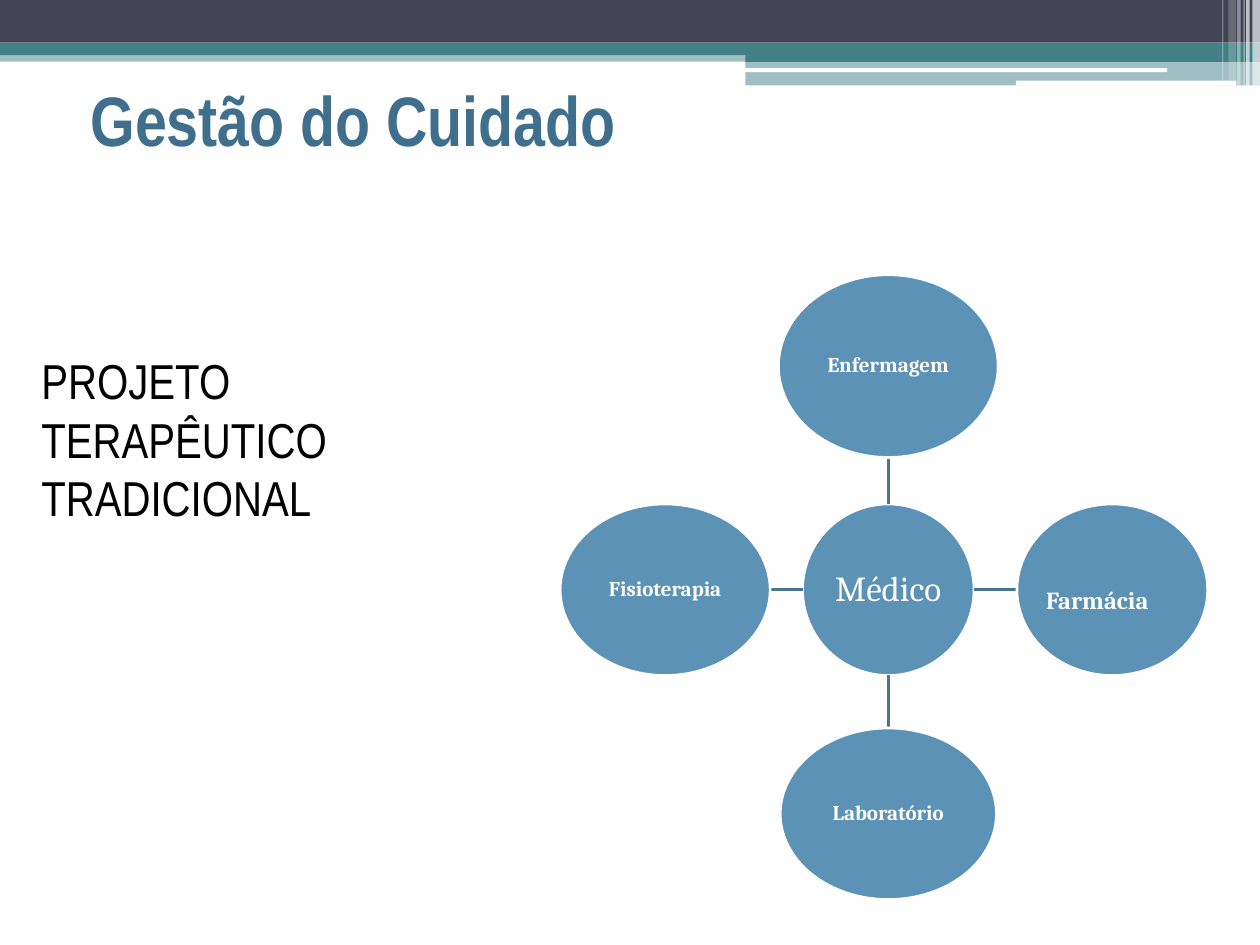
from lxml import etree
from pptx import Presentation
from pptx.dml.color import RGBColor
from pptx.enum.shapes import MSO_CONNECTOR, MSO_SHAPE
from pptx.enum.text import MSO_ANCHOR, PP_ALIGN
from pptx.oxml.ns import qn
from pptx.util import Pt

RECT, ROUND, OVAL = MSO_SHAPE.RECTANGLE, MSO_SHAPE.ROUNDED_RECTANGLE, MSO_SHAPE.OVAL
STRAIGHT = MSO_CONNECTOR.STRAIGHT
TOP, MIDDLE = MSO_ANCHOR.TOP, MSO_ANCHOR.MIDDLE
LEFT, CENTER = PP_ALIGN.LEFT, PP_ALIGN.CENTER

WHITE = RGBColor(0xFF, 0xFF, 0xFF)
BLACK = RGBColor(0x00, 0x00, 0x00)
NAVY = RGBColor(0x42, 0x44, 0x56)
TEAL = RGBColor(0x43, 0x80, 0x86)
TITLE_BLUE = RGBColor(0x40, 0x6F, 0x8D)
CIRCLE_BLUE = RGBColor(0x5C, 0x92, 0xB5)
SPOKE_BLUE = RGBColor(0x4A, 0x75, 0x91)


class SlideBuilder:
    heading_font = "Arial Narrow"
    diagram_font = "Cambria"
    line_width = Pt(1.5)

    def __init__(self, slide):
        self.shapes = slide.shapes

    def _shape(self, kind, x, y, w, h, color):
        shape = self.shapes.add_shape(kind, Pt(x), Pt(y), Pt(w), Pt(h))
        shape.shadow.inherit = False
        shape.fill.solid()
        shape.fill.fore_color.rgb = color
        return shape

    def _write(self, frame, text, font_name, size, color, bold, align, anchor):
        frame.word_wrap = True
        frame.vertical_anchor = anchor
        paragraph = frame.paragraphs[0]
        paragraph.text = text
        paragraph.alignment = align
        font = paragraph.font
        font.name, font.size, font.bold = font_name, Pt(size), bold
        font.color.rgb = color
        return paragraph

    def bar(self, x, y, w, h, color, opacity=100, kind=RECT):
        bar = self._shape(kind, x, y, w, h, color)
        bar.line.fill.background()
        if opacity < 100:
            rgb = bar.fill._xPr.find(".//" + qn("a:srgbClr"))
            etree.SubElement(rgb, qn("a:alpha"), val=str(opacity * 1000))

    def text(self, text, x, y, w, h, size, color, bold=False, anchor=TOP):
        box = self.shapes.add_textbox(Pt(x), Pt(y), Pt(w), Pt(h))
        self._write(box.text_frame, text, self.heading_font, size, color, bold, LEFT, anchor)

    def circle(self, text, cx, cy, w, h, size, bold=True, align=CENTER, drop=0):
        """Ellipse around (cx, cy); drop moves its label down."""
        circle = self._shape(OVAL, cx - w / 2, cy - h / 2, w, h, CIRCLE_BLUE)
        circle.line.color.rgb = WHITE
        circle.line.width = self.line_width
        frame = circle.text_frame
        frame.margin_left = frame.margin_right = frame.margin_bottom = Pt(0.75)
        frame.margin_top = Pt(0.75 + 2 * drop)
        label = self._write(frame, text, self.diagram_font, size, WHITE, bold, align, MIDDLE)
        label.line_spacing = 0.9

    def spoke(self, x1, y1, x2, y2):
        spoke = self.shapes.add_connector(STRAIGHT, Pt(x1), Pt(y1), Pt(x2), Pt(y2))
        spoke.line.color.rgb = SPOKE_BLUE
        spoke.line.width = self.line_width
        etree.SubElement(spoke._element.spPr, qn("a:effectLst"))


def main():
    prs = Presentation()
    prs.slide_width, prs.slide_height = Pt(720), Pt(540)
    page = SlideBuilder(prs.slides.add_slide(prs.slide_layouts[6]))

    # Header bands
    page.bar(0, 28.8, 720, 6.5, TEAL, 50)
    page.bar(0, 0, 720, 24.4, NAVY)
    page.bar(0, 24.4, 720, 7.2, TEAL)
    page.bar(426, 28.2, 294, 7.2, TEAL)
    page.bar(426, 34.6, 294, 14.2, TEAL, 50)
    page.bar(425.5, 39, 241.5, 2.2, WHITE, kind=ROUND)
    page.bar(580.5, 46.1, 126, 2.8, WHITE, kind=ROUND)

    # Light stripes at the right end: left, width, height, opacity
    for x, w, h, opacity in (
        (715.7, 4.3, 49, 65),
        (712.1, 2, 49, 65),
        (710.6, 0.7, 49, 60),
        (707, 2, 49, 40),
        (702, 4.3, 46.1, 20),
        (698.4, 0.7, 46.1, 30),
    ):
        page.bar(x, 0, w, h, WHITE, opacity)

    # Title and description
    page.text("Gestão do Cuidado", 44.6, 26, 630, 84, 40, TITLE_BLUE, True, MIDDLE)
    page.text("PROJETO TERAPÊUTICO TRADICIONAL", 16.6, 196.6, 275.8, 108.7, 28, BLACK)

    # Care diagram: one hub, four services around it
    hub_x, hub_y, hub_size = 507.6, 337, 98
    hub_radius = hub_size / 2
    page.circle("Médico", hub_x, hub_y, hub_size, hub_size, 20, bold=False)

    # Service, direction from hub, distance, width, height, label style
    for service, dx, dy, distance, w, h, label in (
        ("Enfermagem", 0, -1, 127.8, 125.5, 104.4, {"size": 12}),
        ("Farmácia", 1, 0, 128, 109, 98, {"size": 14, "align": LEFT, "drop": 6.5}),
        ("Laboratório", 0, 1, 128, 123.5, 98, {"size": 12}),
        ("Fisioterapia", -1, 0, 127.5, 120, 98, {"size": 12}),
    ):
        reach = distance - (w if dx else h) / 2
        page.spoke(hub_x + dx * hub_radius, hub_y + dy * hub_radius,
                   hub_x + dx * reach, hub_y + dy * reach)
        page.circle(service, hub_x + dx * distance, hub_y + dy * distance, w, h, **label)

    prs.save("out.pptx")


if __name__ == "__main__":
    main()
